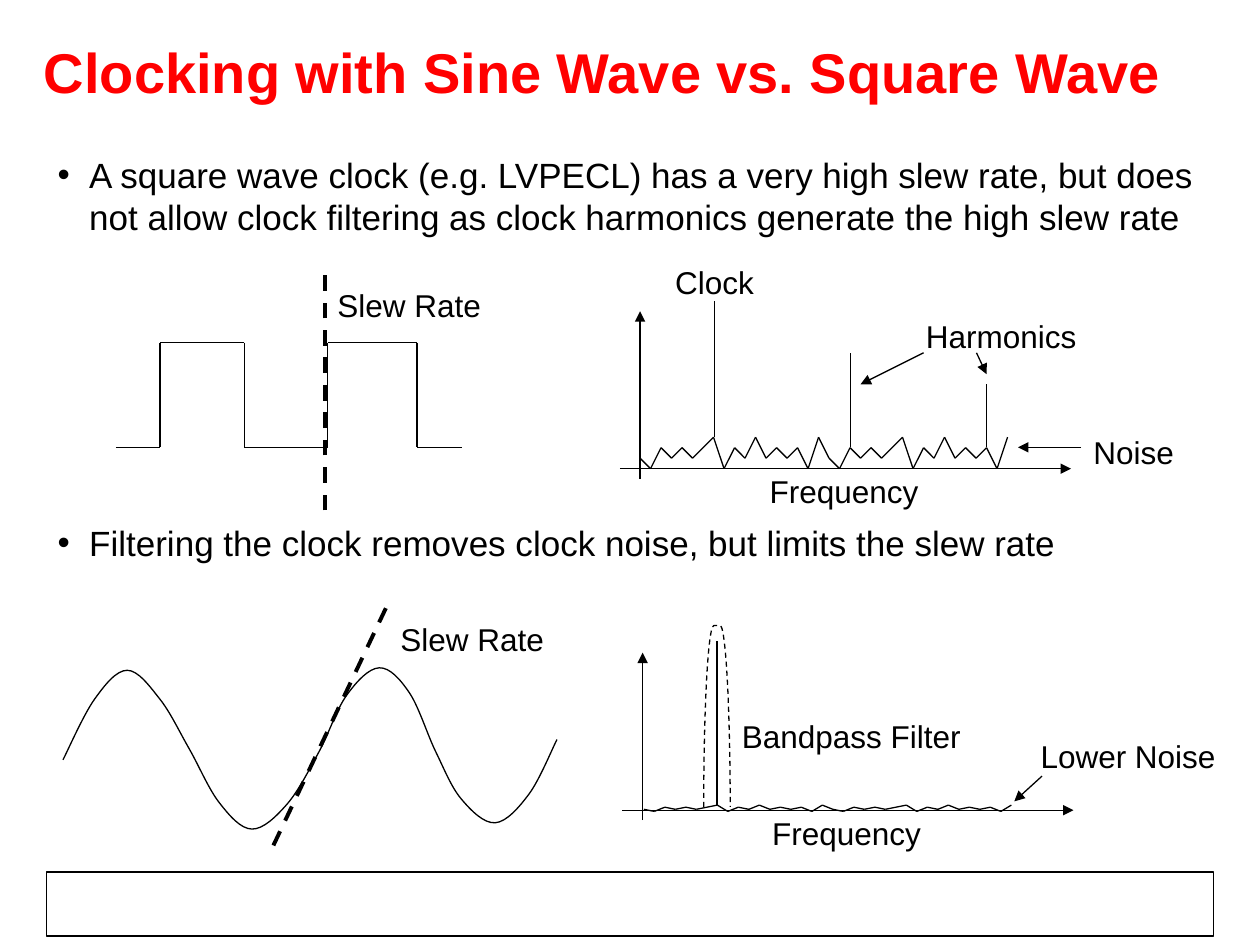
import itertools

import pptx
import pptx.dml.color
import pptx.enum.dml
import pptx.enum.shapes
import pptx.enum.text
import pptx.oxml
import pptx.oxml.ns
import pptx.util
from pptx.util import Inches

COLORS = {"title": "FF0000", "ink": "000000"}
FONT = "Arial"
DASH = pptx.enum.dml.MSO_LINE.DASH

# Noise heights, one per twelfth of an inch; "-" has no corner
NOISE_LEVELS = "102121-30213121203" * 2
SQUARE_WAVE = [(0.92, 3.55), (1.27, 3.55), (1.27, 2.72), (1.94, 2.72), (1.94, 3.55),
               (2.6, 3.55), (2.6, 2.72), (3.31, 2.72), (3.31, 3.55), (3.67, 3.55)]
SINE_WAVE = [(0.5, 6.03), (0.75, 5.55), (1.01, 5.32), (1.27, 5.55), (1.5, 5.94),
             (1.74, 6.37), (2, 6.58), (2.28, 6.38), (2.53, 5.97), (2.75, 5.52),
             (3.01, 5.3), (3.25, 5.5), (3.46, 5.97), (3.66, 6.34), (3.93, 6.53),
             (4.2, 6.3), (4.42, 5.87)]


def rgb(name):
    return pptx.dml.color.RGBColor.from_string(COLORS[name])


def append_xml(parent, tag, **attributes):
    element = pptx.oxml.parse_xml(f"<a:{tag} {pptx.oxml.ns.nsdecls('a')}/>")
    for key, value in attributes.items():
        element.set(key, str(value))
    parent.append(element)
    return element


def style_line(line, width=0.75, dash=None):
    line.color.rgb = rgb("ink")
    line.width = pptx.util.Pt(width)
    if dash is not None:
        line.dash_style = dash


def style_outline(shape, dash=None):
    shape.shadow.inherit = False
    shape.fill.background()
    style_line(shape.line, dash=dash)


def add_line(shapes, start, end, arrow=False, width=0.75, dash=None):
    ends = [Inches(value) for value in (*start, *end)]
    connector = shapes.add_connector(pptx.enum.shapes.MSO_CONNECTOR.STRAIGHT, *ends)
    style_line(connector.line, width, dash)
    if arrow:
        append_xml(connector.line._get_or_add_ln(), "tailEnd", type="triangle")
    append_xml(connector._element.spPr, "effectLst")


def add_polyline(slide, points):
    group = slide.shapes.add_group_shape()
    for start, end in itertools.pairwise(points):
        add_line(group.shapes, start, end)


def add_smooth_curve(slide, points):
    """Draw Bezier pieces whose tangents follow the neighbouring points."""
    points = [(Inches(x), Inches(y)) for x, y in points]
    builder = slide.shapes.build_freeform(*points[0])
    builder.add_line_segments(points[1:], close=False)
    shape = builder.convert_to_shape()
    style_outline(shape)

    path = shape._element.find(".//" + pptx.oxml.ns.qn("a:path"))
    for segment in path.findall(pptx.oxml.ns.qn("a:lnTo")):
        path.remove(segment)
    padded = [points[0], *points, points[-1]]
    for before, start, end, after in zip(padded, padded[1:], padded[2:], padded[3:]):
        leaving = [s + (e - b) / 6 for b, s, e in zip(before, start, end)]
        arriving = [e - (a - s) / 6 for s, e, a in zip(start, end, after)]
        curve = append_xml(path, "cubicBezTo")
        for x, y in (leaving, arriving, end):
            append_xml(curve, "pt", x=round(x - shape.left), y=round(y - shape.top))


def add_text(slide, box, paragraphs, size, color="ink", bold=False, wrap=True):
    shape = slide.shapes.add_textbox(*[Inches(value) for value in box])
    frame = shape.text_frame
    frame.text = "\n".join(paragraphs)
    frame.word_wrap = wrap
    for paragraph in frame.paragraphs:
        for run in paragraph.runs:
            run.font.name = FONT
            run.font.size = pptx.util.Pt(size)
            run.font.bold = bold
            run.font.color.rgb = rgb(color)
    return frame


def add_label(slide, text, left, top, width):
    add_text(slide, (left, top, width, 0.4), [text], 18, wrap=False)


def add_bullets(slide, box, paragraphs, gap):
    frame = add_text(slide, box, paragraphs, 20)
    for paragraph in frame.paragraphs:
        properties = paragraph._p.get_or_add_pPr()
        properties.set("marL", str(Inches(0.25)))
        properties.set("indent", str(Inches(-0.25)))
        append_xml(properties, "buFont", typeface=FONT)
        append_xml(properties, "buChar", char="•")
    for paragraph in frame.paragraphs[1:]:
        paragraph.space_before = pptx.util.Pt(gap)


def add_spectrum(slide, left, base, noise_left, noise_base, noise_step):
    """Draw the two axes and the noise floor."""
    add_line(slide.shapes, (left, base + 0.08), (left, base - 1.25), arrow=True)
    add_line(slide.shapes, (left - 0.16, base), (left + 3.42, base), arrow=True)
    add_polyline(slide, [(noise_left + index / 12, noise_base - int(level) * noise_step)
                         for index, level in enumerate(NOISE_LEVELS) if level != "-"])
    add_label(slide, "Frequency", left + 0.93, base - 0.02, 1.38)


def main():
    presentation = pptx.Presentation()
    presentation.slide_width = Inches(10)
    presentation.slide_height = Inches(7.5)
    slide = presentation.slides.add_slide(presentation.slide_layouts[6])
    shapes = slide.shapes

    # Footer frame, title and bullets
    footer = shapes.add_shape(pptx.enum.shapes.MSO_SHAPE.RECTANGLE, Inches(0.37),
                              Inches(6.92), Inches(9.26), Inches(0.51))
    style_outline(footer)
    title = add_text(slide, (0.25, 0.16, 9.25, 0.89),
                     ["Clocking with Sine Wave vs. Square Wave"], 32, "title", bold=True)
    title.vertical_anchor = pptx.enum.text.MSO_ANCHOR.MIDDLE
    title.paragraphs[0].line_spacing = 0.85
    add_bullets(slide, (0.36, 1.17, 9.26, 5.13), [
        "A square wave clock (e.g. LVPECL) has a very high slew rate, but does not "
        "allow clock filtering as clock harmonics generate the high slew rate",
        "Filtering the clock removes clock noise, but limits the slew rate",
    ], gap=162)

    # Square wave
    add_polyline(slide, SQUARE_WAVE)
    add_line(shapes, (2.58, 4.05), (2.58, 2.14), width=2.25, dash=DASH)
    add_label(slide, "Slew Rate", 2.58, 2.22, 1.34)

    # Spectrum of the square wave
    add_spectrum(slide, 5.08, 3.72, 5.08, 3.72, 0.25 / 3)
    for x, bottom, top in [(5.67, 3.47, 2.39), (6.75, 3.55, 2.8), (7.83, 3.55, 3.05)]:
        add_line(shapes, (x, bottom), (x, top))
    add_label(slide, "Clock", 5.26, 2.04, 0.83)
    add_label(slide, "Harmonics", 7.25, 2.47, 1.4)
    add_line(shapes, (7.33, 2.8), (6.83, 3.05), arrow=True)
    add_line(shapes, (7.75, 2.8), (7.83, 2.97), arrow=True)
    add_label(slide, "Noise", 8.58, 3.39, 0.84)
    add_line(shapes, (8.58, 3.55), (8.08, 3.55), arrow=True)

    # Sine wave
    add_smooth_curve(slide, SINE_WAVE)
    add_line(shapes, (2.17, 6.71), (3.08, 4.79), width=2.25, dash=DASH)
    add_label(slide, "Slew Rate", 3.08, 4.87, 1.34)

    # Spectrum of the filtered clock
    add_spectrum(slide, 5.1, 6.43, 5.11, 6.44, 0.05 / 3)
    add_line(shapes, (5.69, 6.39), (5.69, 5.09))
    bandpass = shapes.add_shape(pptx.enum.shapes.MSO_SHAPE.LEFT_BRACKET, Inches(4.97),
                                Inches(5.58), Inches(1.44), Inches(0.21))
    bandpass.rotation = 90
    bandpass.adjustments[0] = 0.38
    style_outline(bandpass, dash=DASH)
    add_label(slide, "Bandpass Filter", 5.79, 5.64, 1.94)
    add_label(slide, "Lower Noise", 8.16, 5.8, 1.59)
    add_line(shapes, (8.27, 6.16), (8.05, 6.36), arrow=True)

    presentation.save("out.pptx")


if __name__ == "__main__":
    main()
